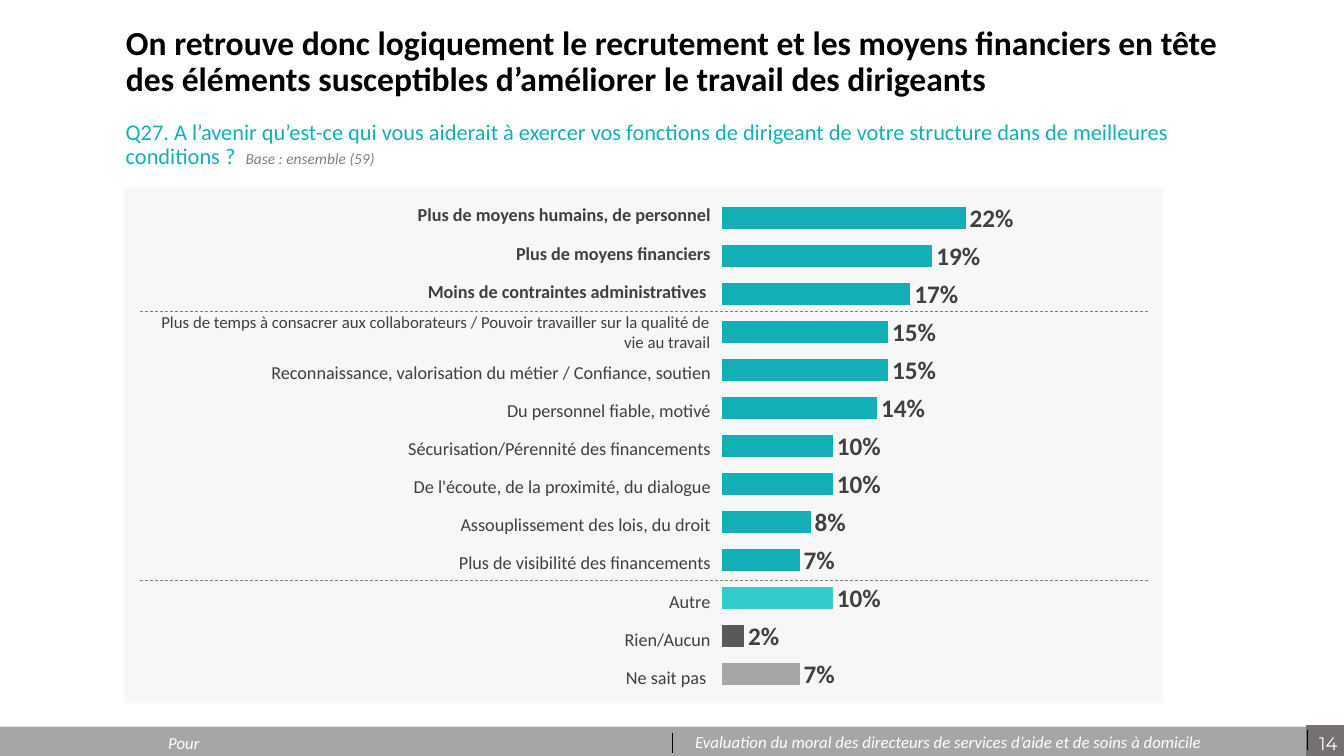
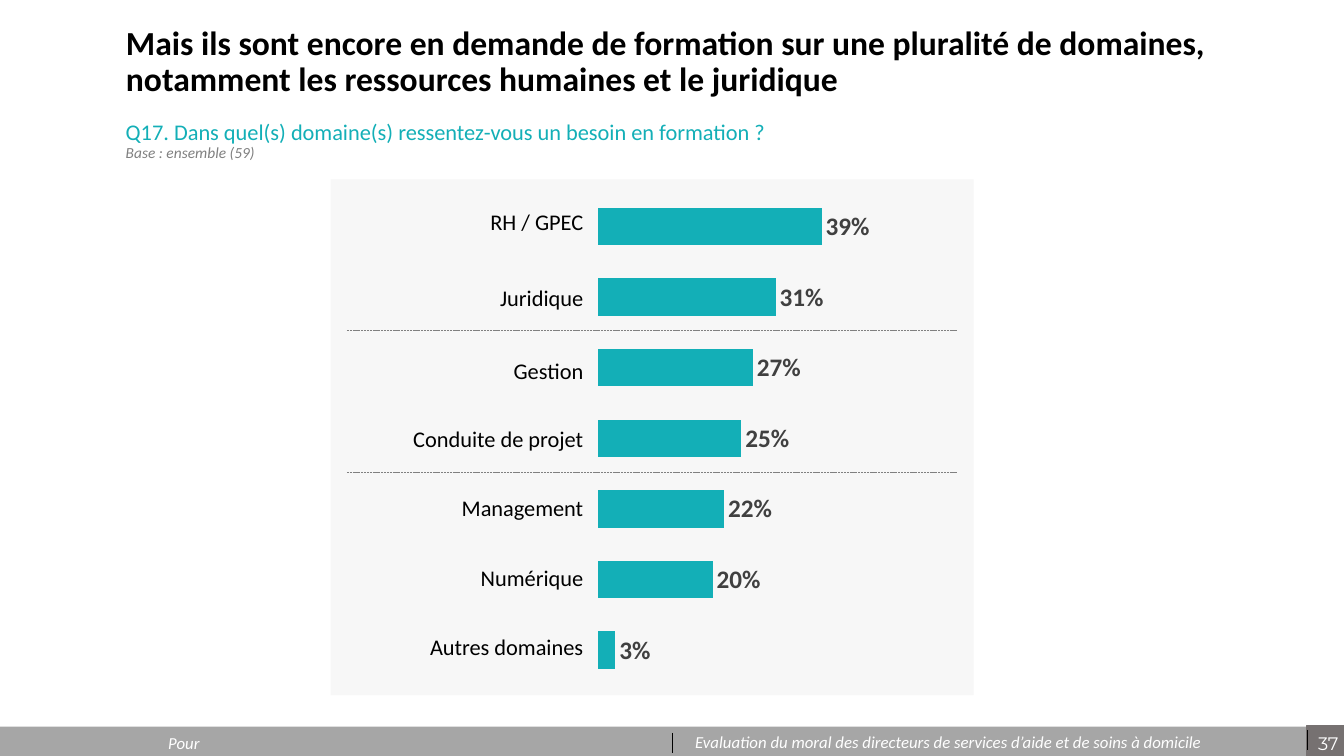
"""Build two survey slides with labelled bar charts."""
from typing import NamedTuple

from lxml.etree import SubElement
from pptx import Presentation
from pptx.chart.data import CategoryChartData
from pptx.dml.color import RGBColor
from pptx.enum.chart import XL_CHART_TYPE, XL_LABEL_POSITION
from pptx.enum.dml import MSO_LINE
from pptx.enum.shapes import MSO_CONNECTOR, MSO_SHAPE
from pptx.enum.text import MSO_ANCHOR, MSO_AUTO_SIZE, PP_ALIGN
from pptx.oxml.ns import qn
from pptx.util import Cm, Pt

COLORS = {
    "black": "000000",
    "white": "FFFFFF",
    "teal": "13AFB7",
    "turquoise": "33CCCC",
    "panel": "F7F7F7",
    "footer": "A6A6A6",
    "page": "767171",
    "muted": "808080",
    "text": "404040",
    "dark": "595959",
}
FONT = "Calibri"
NO_TABLE_STYLE = "{2D5ABB26-0587-4C30-8999-92F81FD0307C}"
FOOTER = "Evaluation du moral des directeurs de services d’aide et de soins à domicile"
BASE = "Base : ensemble (59)"


class Box(NamedTuple):
    left: float
    top: float
    width: float
    height: float

    def lengths(self):
        return [Cm(value) for value in self]


class Label(NamedTuple):
    text: str
    value: float
    height: float
    size: float
    bold: bool = False


class Panel(NamedTuple):
    box: Box
    labels: list
    label_box: Box
    label_color: str
    chart_box: Box
    plot_width: float
    axis_maximum: float
    gap: int
    point_colors: dict
    dividers: tuple
    dash: MSO_LINE


def rgb(name):
    return RGBColor.from_string(COLORS[name])


def style_font(font, size, color, bold=False, italic=False, name=FONT):
    font.name, font.size = name, Pt(size)
    font.bold, font.italic = bold, italic
    font.color.rgb = rgb(color)


def inside(outer, inner):
    return Box(outer.left + inner.left, outer.top + inner.top, inner.width, inner.height)


def add_rectangle(slide, box, color, outline=None):
    shape = slide.shapes.add_shape(MSO_SHAPE.RECTANGLE, *box.lengths())
    shape.shadow.inherit = False
    shape.fill.solid()
    shape.fill.fore_color.rgb = rgb(color)
    if outline:
        shape.line.color.rgb = rgb(outline)
        shape.line.width = Pt(1)
    else:
        shape.line.fill.background()


def add_line(slide, start, end, color, dash=None):
    line = slide.shapes.add_connector(
        MSO_CONNECTOR.STRAIGHT, *[Cm(value) for value in (*start, *end)])
    line.line.color.rgb = rgb(color)
    line.line.width = Pt(0.5)
    if dash:
        line.line.dash_style = dash
    SubElement(line._element.spPr, qn("a:effectLst"))


def add_text(slide, box, wrap=True):
    frame = slide.shapes.add_textbox(*box.lengths()).text_frame
    frame.word_wrap = wrap
    return frame


def add_footer(slide, box, page):
    add_rectangle(slide, box, "footer")
    page_box = inside(box, Box(32.94, -0.02, 0.93, 0.76))
    add_rectangle(slide, page_box, "page", "page")
    for left, offset in ((32.94, 0.08), (16.94, 0.16)):
        top = box.top + offset
        add_line(slide, (left, top), (left, top + 0.5), "black")

    number = add_text(slide, inside(box, Box(33.08, 0.03, 0.79, 0.7)), False)
    number.margin_left = number.margin_right = 0
    paragraph = number.paragraphs[0]
    paragraph.text = str(page)
    paragraph.alignment = PP_ALIGN.CENTER
    style_font(paragraph.font, 12.9, "white", name="Montserrat")

    for text, area in (("Pour", Box(3.99, 0.03, 1.32, 0.7)),
                       (FOOTER, Box(17.27, 0, 14.61, 0.74))):
        paragraph = add_text(slide, inside(box, area)).paragraphs[0]
        paragraph.text = text
        style_font(paragraph.font, 12, "white", italic=True)


def add_title(slide, box, text):
    title = slide.shapes.title
    title.left, title.top, title.width, title.height = box.lengths()
    frame = title.text_frame
    frame.text = text
    frame.auto_size = MSO_AUTO_SIZE.NONE
    frame.vertical_anchor = MSO_ANCHOR.MIDDLE
    paragraph = frame.paragraphs[0]
    paragraph.alignment = PP_ALIGN.LEFT
    paragraph.line_spacing = 0.9
    style_font(paragraph.font, 24, "black", bold=True)


def add_question(slide, box, question, base_tab=None):
    frame = add_text(slide, box)
    paragraph = frame.paragraphs[0]
    paragraph.line_spacing = 0.9
    run = paragraph.add_run()
    run.text = question
    style_font(run.font, 16, "teal")
    if base_tab:
        tabs = SubElement(paragraph._p.get_or_add_pPr(), qn("a:tabLst"))
        SubElement(tabs, qn("a:tab"), pos=str(Cm(base_tab)), algn="l")
        run.text += "\t"
    else:
        paragraph = frame.add_paragraph()
        paragraph.line_spacing = 0.9
    run = paragraph.add_run()
    run.text = BASE
    style_font(run.font, 11, "muted", italic=True)


def add_labels(slide, box, labels, color):
    table = slide.shapes.add_table(len(labels), 1, *box.lengths()).table
    table.first_row = table.horz_banding = False
    table._tbl.tblPr.find(qn("a:tableStyleId")).text = NO_TABLE_STYLE
    for index, label in enumerate(labels):
        table.rows[index].height = Cm(label.height)
        cell = table.cell(index, 0)
        cell.fill.background()
        cell.vertical_anchor = MSO_ANCHOR.MIDDLE
        cell.margin_left = cell.margin_right = cell.margin_top = Cm(0.03)
        cell.margin_bottom = 0
        paragraph = cell.text_frame.paragraphs[0]
        paragraph.text = label.text
        paragraph.alignment = PP_ALIGN.RIGHT
        style_font(paragraph.font, label.size, color, label.bold)


def set_plot_area(chart, **fractions):
    plot_area = chart._chartSpace.chart.plotArea
    layout = plot_area.find(qn("c:layout"))
    if layout is None:
        layout = SubElement(plot_area, qn("c:layout"))
        plot_area.insert(0, layout)
    manual = SubElement(layout, qn("c:manualLayout"))
    settings = {"layoutTarget": "inner", "xMode": "edge", "yMode": "edge", **fractions}
    for tag, value in settings.items():
        SubElement(manual, qn(f"c:{tag}"), val=str(value))


def add_bars(slide, box, panel):
    data = CategoryChartData(number_format="0%")
    data.categories = [str(index + 1) for index in range(len(panel.labels))]
    data.add_series("Series 1", [label.value for label in panel.labels])
    chart = slide.shapes.add_chart(
        XL_CHART_TYPE.BAR_CLUSTERED, *box.lengths(), data).chart
    chart.has_legend = chart.has_title = False
    style_font(chart.font, 18, "black")
    chart.category_axis.reverse_order = True
    chart.value_axis.minimum_scale = 0
    chart.value_axis.maximum_scale = panel.axis_maximum
    chart.value_axis.has_major_gridlines = False
    chart.category_axis.visible = chart.value_axis.visible = False
    set_plot_area(chart, x=0.032, y=0.023, w=panel.plot_width, h=0.958)

    plot = chart.plots[0]
    plot.gap_width, plot.overlap = panel.gap, -9
    plot.vary_by_categories = False
    series = plot.series[0]
    series.invert_if_negative = False
    fills = [(series.format.fill, "teal")]
    fills += [(series.points[index].format.fill, color)
              for index, color in panel.point_colors.items()]
    for fill, color in fills:
        fill.solid()
        fill.fore_color.rgb = rgb(color)
    labels = series.data_labels
    labels.show_value = True
    labels.position = XL_LABEL_POSITION.OUTSIDE_END
    labels.number_format, labels.number_format_is_linked = "0%", False
    style_font(labels.font, 18, "text", bold=True)


def add_panel(slide, panel):
    box = panel.box
    add_rectangle(slide, box, "panel")
    add_labels(slide, inside(box, panel.label_box), panel.labels, panel.label_color)
    add_bars(slide, inside(box, panel.chart_box), panel)
    for offset in panel.dividers:
        top = box.top + offset
        add_line(slide, (box.left + 0.41, top),
                 (box.left + box.width - 0.41, top), "muted", panel.dash)


def add_survey_slide(presentation, page, title, question, panel,
                     question_width, base_tab=None):
    slide = presentation.slides.add_slide(presentation.slide_layouts[5])
    add_footer(slide, Box(0, 18.31, 33.87, 0.74), page)
    add_title(slide, Box(2.92, 0.79, 29.21, 1.57), title)
    add_question(slide, Box(2.92, 2.92, question_width, 1.4), question, base_tab)
    add_panel(slide, panel)


IMPROVEMENTS = Panel(
    box=Box(3.12, 4.72, 26.21, 13),
    labels=[
        Label("Plus de moyens humains, de personnel", 0.22, 1.02, 13, True),
        Label("Plus de moyens financiers", 0.19, 0.96, 13, True),
        Label("Moins de contraintes administratives ", 0.17, 0.94, 13, True),
        Label("Plus de temps à consacrer aux collaborateurs / Pouvoir travailler "
              "sur la qualité de vie au travail", 0.15, 1.09, 12),
        Label("Reconnaissance, valorisation du métier / Confiance, soutien", 0.15, 0.96, 13),
        Label("Du personnel fiable, motivé", 0.14, 0.96, 13),
        Label("Sécurisation/Pérennité des financements", 0.1, 0.96, 13),
        Label("De l'écoute, de la proximité, du dialogue", 0.1, 0.96, 13),
        Label("Assouplissement des lois, du droit", 0.08, 0.96, 13),
        Label("Plus de visibilité des financements", 0.07, 0.96, 13),
        Label("Autre", 0.1, 0.96, 13),
        Label("Rien/Aucun", 0.02, 0.96, 13),
        Label("Ne sait pas ", 0.07, 0.96, 13),
    ],
    label_box=Box(0.41, 0.18, 14.4, 12.65), label_color="text",
    chart_box=Box(14.61, 0, 14.61, 13), plot_width=0.955,
    axis_maximum=0.5, gap=75,
    point_colors={10: "turquoise", 11: "dark", 12: "footer"},
    dividers=(3.13, 9.91), dash=MSO_LINE.DASH)

TRAINING = Panel(
    box=Box(8.33, 4.52, 16.21, 13),
    labels=[
        Label("RH / GPEC", 0.39, 1.78, 16),
        Label("Juridique", 0.31, 2.01, 16),
        Label("Gestion", 0.27, 1.68, 16),
        Label("Conduite de projet", 0.25, 1.75, 16),
        Label("Management", 0.22, 1.75, 16),
        Label("Numérique", 0.2, 1.75, 16),
        Label("Autres domaines", 0.03, 1.75, 16),
    ],
    label_box=Box(0.58, 0.2, 5.82, 12.47), label_color="black",
    chart_box=Box(6.2, 0, 16.99, 13), plot_width=0.935,
    axis_maximum=1.1, gap=88, point_colors={},
    dividers=(3.81, 7.39), dash=MSO_LINE.SQUARE_DOT)


def main():
    presentation = Presentation()
    presentation.slide_width, presentation.slide_height = Cm(33.87), Cm(19.05)
    add_survey_slide(
        presentation, 14,
        "On retrouve donc logiquement le recrutement et les moyens financiers en tête "
        "des éléments susceptibles d’améliorer le travail des dirigeants",
        "Q27. A l’avenir qu’est-ce qui vous aiderait à exercer vos fonctions de dirigeant "
        "de votre structure dans de meilleures conditions ?", IMPROVEMENTS, 27.61, 3.02)
    add_survey_slide(
        presentation, 37,
        "Mais ils sont encore en demande de formation sur une pluralité de domaines, "
        "notamment les ressources humaines et le juridique",
        "Q17. Dans quel(s) domaine(s) ressentez-vous un besoin en formation ?",
        TRAINING, 22.2)
    presentation.save("out.pptx")


if __name__ == "__main__":
    main()
